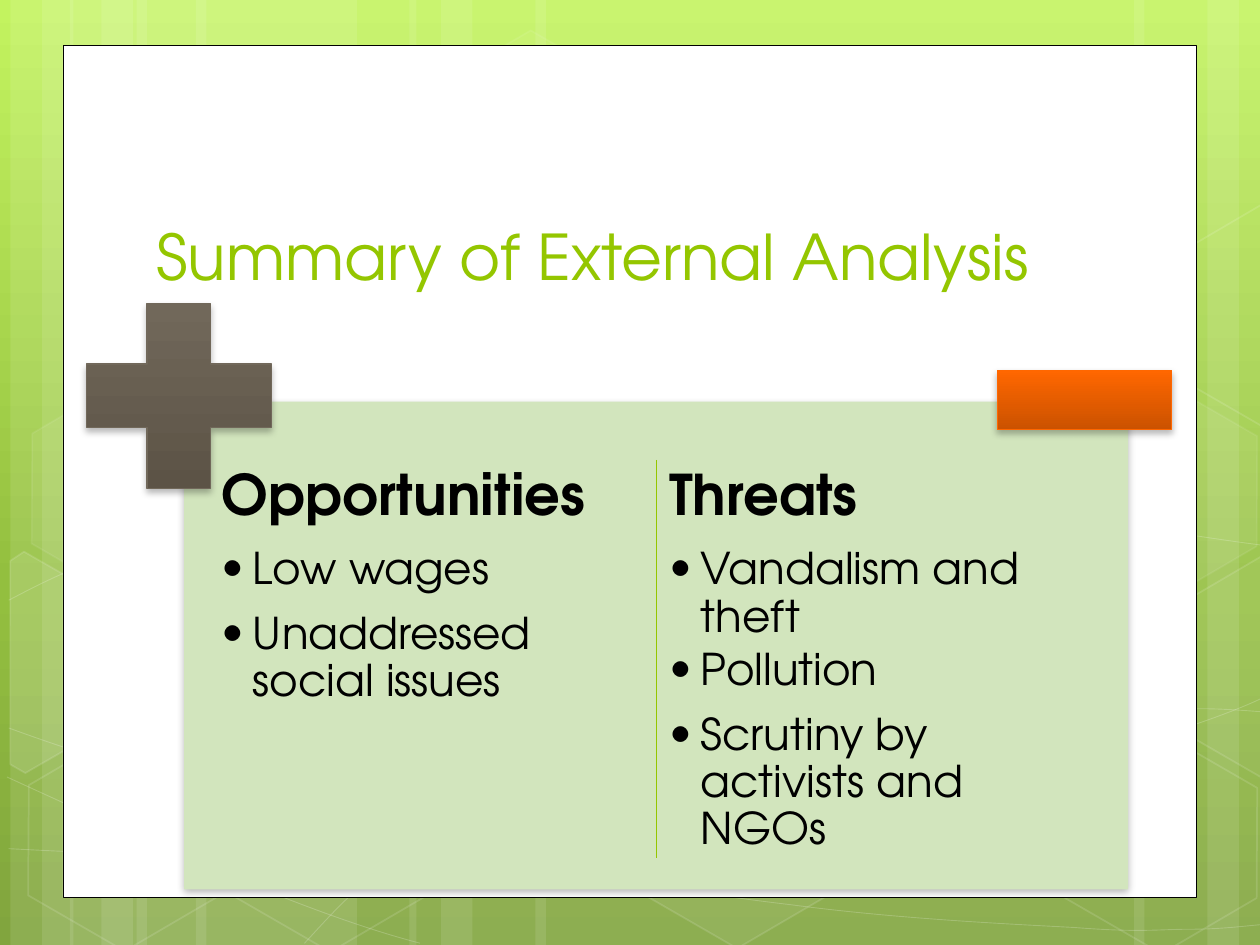
from copy import deepcopy
from dataclasses import dataclass
from typing import Optional

from lxml import etree
from pptx import Presentation
from pptx.dml.color import RGBColor
from pptx.enum.shapes import MSO_CONNECTOR, MSO_SHAPE
from pptx.enum.text import MSO_ANCHOR
from pptx.oxml.ns import qn
from pptx.util import Pt

RECTANGLE, HEXAGON, PLUS = MSO_SHAPE.RECTANGLE, MSO_SHAPE.HEXAGON, MSO_SHAPE.CROSS
STRAIGHT = MSO_CONNECTOR.STRAIGHT
TOP, BOTTOM = MSO_ANCHOR.TOP, MSO_ANCHOR.BOTTOM
FONT = "TeX Gyre Adventor"
WHITE, BLACK, GREEN = "FFFFFF", "000000", "94C600"
WIDTH, HEIGHT = 720, 540
TILT = 30


@dataclass
class Look:
    fill: Optional[str] = None
    fill_alpha: int = 100
    line: Optional[str] = None
    line_width: float = 1
    line_alpha: int = 100


@dataclass
class Hexagon:
    left: float
    top: float
    fill_alpha: int
    line_alpha: int


@dataclass
class CutHexagon:
    center: tuple
    corners: list
    look: Look


@dataclass
class Line:
    text: str
    size: float
    color: str = BLACK
    bold: bool = False
    bullet: bool = False
    spacing: float = 1.0
    after: float = 0


def rgb(color: str) -> RGBColor:
    return RGBColor.from_string(color)


def set_alpha(parent, percent: int) -> None:
    if percent < 100:
        color = next(parent.iter(qn("a:srgbClr")))
        etree.SubElement(color, qn("a:alpha")).set("val", str(percent * 1000))


def apply_look(shape, look: Look) -> None:
    shape.shadow.inherit = False
    properties = shape._element.spPr
    if look.fill:
        shape.fill.solid()
        shape.fill.fore_color.rgb = rgb(look.fill)
        set_alpha(properties.find(qn("a:solidFill")), look.fill_alpha)
    else:
        shape.fill.background()
    if look.line:
        shape.line.color.rgb = rgb(look.line)
        shape.line.width = Pt(look.line_width)
        set_alpha(properties.find(qn("a:ln")), look.line_alpha)
    else:
        shape.line.fill.background()


def add_preset(page, kind, box: tuple, look: Look, adjustments: tuple = ()):
    shape = page.shapes.add_shape(kind, *map(Pt, box))
    for index, value in enumerate(adjustments):
        shape.adjustments[index] = value
    apply_look(shape, look)
    return shape


def add_outline(page, points: list, look: Look, close: bool):
    corners = [(Pt(x), Pt(y)) for x, y in points]
    builder = page.shapes.build_freeform(*corners[0], scale=1.0)
    builder.add_line_segments(corners[1:], close=close)
    shape = builder.convert_to_shape()
    apply_look(shape, look)
    return shape


def add_curve(page, knots: list, look: Look) -> None:
    """Draw a chain of cubic curves: a start, then triples of knots."""
    shape = add_outline(page, knots, look, False)
    segments = list(shape._element.iter(qn("a:lnTo")))
    for first in range(0, len(segments), 3):
        triple = segments[first:first + 3]
        curve = etree.Element(qn("a:cubicBezTo"))
        triple[0].addprevious(curve)
        for segment in triple:
            curve.append(segment[0])
            segment.getparent().remove(segment)


def paint_gradient(fill, element, stops: list) -> None:
    fill.gradient()
    fill.gradient_angle = 270
    stop_list = next(element.iter(qn("a:gsLst")))
    while len(stop_list) < len(stops):
        stop_list.append(deepcopy(stop_list[-1]))
    for stop, (position, color) in zip(fill.gradient_stops, stops):
        stop.position = position
        stop.color.rgb = rgb(color)


def add_shadow(shape) -> None:
    effects = shape._element.spPr.find(qn("a:effectLst"))
    shadow = etree.SubElement(effects, qn("a:outerShdw"), blurRad=str(Pt(4)),
                              dist=str(Pt(2)), dir="5400000", rotWithShape="0")
    etree.SubElement(shadow, qn("a:srgbClr"), val=BLACK)
    set_alpha(shadow, 28)


def add_text(page, box: tuple, lines: list, anchor, insets: tuple) -> None:
    frame = page.shapes.add_textbox(*map(Pt, box)).text_frame
    frame.word_wrap = True
    frame.vertical_anchor = anchor
    frame.margin_left = frame.margin_right = Pt(insets[0])
    frame.margin_top = frame.margin_bottom = Pt(insets[1])
    frame.text = "\n".join(line.text for line in lines)
    for paragraph, line in zip(frame.paragraphs, lines):
        paragraph.line_spacing = line.spacing
        paragraph.space_after = Pt(line.after)
        if line.bullet:
            paragraph.level = 1
            properties = paragraph._p.get_or_add_pPr()
            properties.set("marL", str(Pt(18)))
            properties.set("indent", str(-Pt(18)))
            etree.SubElement(properties, qn("a:buFont"), typeface=FONT)
            etree.SubElement(properties, qn("a:buChar"), char="•")
        font = paragraph.runs[0].font
        font.name, font.size, font.bold = FONT, Pt(line.size), line.bold
        font.color.rgb = rgb(line.color)


STRIPS = [(78, 126), (6, 36), (24, 60), (112, 126), (40, 36), (58, 60),
          (528, 126), (690, 36), (648, 60), (306, 222), (234, 36), (252, 60)]
CURVES = [
    [(5, 485), (44, 487), (83, 489), (137, 488), (191, 487), (258, 486), (330, 479),
     (402, 472), (504, 458), (570, 444), (636, 431), (703, 409), (725, 397)],
    [(5, 343), (26, 332), (47, 321), (87, 310), (128, 300), (187, 284), (250, 279),
     (314, 274), (392, 273), (471, 279), (550, 284), (682, 307), (725, 312)],
    [(4, 444), (91, 484), (178, 523), (240, 539)],
    [(5, 416), (27, 424), (50, 432), (92, 444), (134, 454), (197, 472), (257, 485),
     (317, 497), (392, 510), (452, 517), (512, 525), (576, 528), (614, 530),
     (652, 533), (662, 531), (680, 531), (699, 531), (712, 529), (725, 528)],
    [(174, 539), (187, 525), (200, 510), (217, 498), (235, 485), (259, 470), (279, 460),
     (300, 450), (312, 446), (338, 438), (364, 431), (413, 421), (438, 416),
     (464, 411), (467, 411), (490, 410), (512, 408), (547, 405), (572, 405),
     (597, 404), (638, 405), (638, 405), (654, 405), (670, 405), (686, 405),
     (699, 405), (711, 406), (724, 407)],
]
HEXAGONS = [Hexagon(240.5, 26, 4, 8), Hexagon(358, 424, 6, 12), Hexagon(8, 425.5, 0, 12),
            Hexagon(10, 224.5, 7, 8), Hexagon(125.5, 426, 0, 12),
            Hexagon(542, 326, 10, 12), Hexagon(600.5, 427, 0, 12), Hexagon(600.5, 226, 7, 8)]
# Corners of the hexagons cut by the page edge, from their centers, before the tilt
LEFT_CUT = [(-49.7, -46), (-45.5, -54.5), (18.4, -54.7), (49.7, 0.5), (18.4, 54.7), (8.5, 54.7)]
RIGHT_CUT = [(-49, -0.5), (-18.2, -54.7), (-11.7, -54.7), (49, 49.4), (45.5, 54.7), (-17.7, 54.7)]
CUT_HEXAGONS = [
    CutHexagon((25.9, 385.2), LEFT_CUT, Look(WHITE, 10, WHITE, 1, 12)),
    CutHexagon((709.2, 374.4), RIGHT_CUT, Look(WHITE, 4, WHITE, 1, 12)),
    CutHexagon((709.2, 173.5), RIGHT_CUT, Look(None, 100, WHITE, 1, 12)),
]
COLUMNS = [
    (121.5, "Opportunities", [("Low wages", 10), ("Unaddressed social issues", 10)]),
    (377.5, "Threats", [("Vandalism and theft", 3.75), ("Pollution", 10),
                        ("Scrutiny by activists and NGOs", 3.75)]),
]


def draw_backdrop(page) -> None:
    paint_gradient(page.background.fill, page.element,
                   [(0, "C3F35F"), (0.62, "93BF3F"), (1, "81A53E")])
    for left, width in STRIPS:
        add_preset(page, RECTANGLE, (left, 0, width, HEIGHT), Look(WHITE, 10))
    for knots in CURVES:
        add_curve(page, knots, Look(None, 100, WHITE, 0.5, 20))
    for cell in HEXAGONS:
        look = Look(WHITE if cell.fill_alpha else None, cell.fill_alpha, WHITE, 1, cell.line_alpha)
        box = (cell.left, cell.top, 126, 109.4)
        add_preset(page, HEXAGON, box, look, (0.285, 1.155)).rotation = TILT
    for cut in CUT_HEXAGONS:
        points = [(cut.center[0] + x, cut.center[1] + y) for x, y in cut.corners]
        add_outline(page, points, cut.look, True).rotation = TILT
    add_preset(page, RECTANGLE, (36, 26, 648, 487), Look(WHITE, line=BLACK, line_width=0.5))


def draw_analysis(page) -> None:
    # Panel with its two columns
    add_shadow(add_preset(page, RECTANGLE, (105.2, 229.5, 539.5, 278.8), Look("D2E5BD")))
    for left, heading, items in COLUMNS:
        lines = [Line(heading, 32, bold=True, spacing=0.9, after=11)]
        lines += [Line(text, 25, bullet=True, spacing=0.9, after=after) for text, after in items]
        add_text(page, (left, 262, 250.6, 238.3), lines, TOP, (5, 5))

    # Plus and minus signs
    for kind, box, adjustments, top_color, bottom_color in [
        (PLUS, (49.5, 173.5, 105.5, 105.5), (0.328,), "71685A", "5C5346"),
        (RECTANGLE, (570, 211.7, 99.5, 33.8), (), "FF6700", "CB5200"),
    ]:
        sign = add_preset(page, kind, box, Look(line=top_color, line_width=0.75), adjustments)
        paint_gradient(sign.fill, sign._element, [(0, top_color), (1, bottom_color)])
        add_shadow(sign)

    # Divider between the columns
    divider = page.shapes.add_connector(STRAIGHT, Pt(375), Pt(262.8), Pt(375), Pt(490.3))
    divider.line.color.rgb = rgb(GREEN)
    divider.line.width = Pt(0.75)
    etree.SubElement(divider._element.spPr, qn("a:effectLst"))


def main() -> None:
    deck = Presentation()
    deck.slide_width, deck.slide_height = Pt(WIDTH), Pt(HEIGHT)
    page = deck.slides.add_slide(deck.slide_layouts[6])
    draw_backdrop(page)
    draw_analysis(page)
    title = Line("Summary of External Analysis", 36, GREEN)
    add_text(page, (82.3, 81, 553, 90), [title], BOTTOM, (7.2, 3.6))
    deck.save("out.pptx")


if __name__ == "__main__":
    main()
